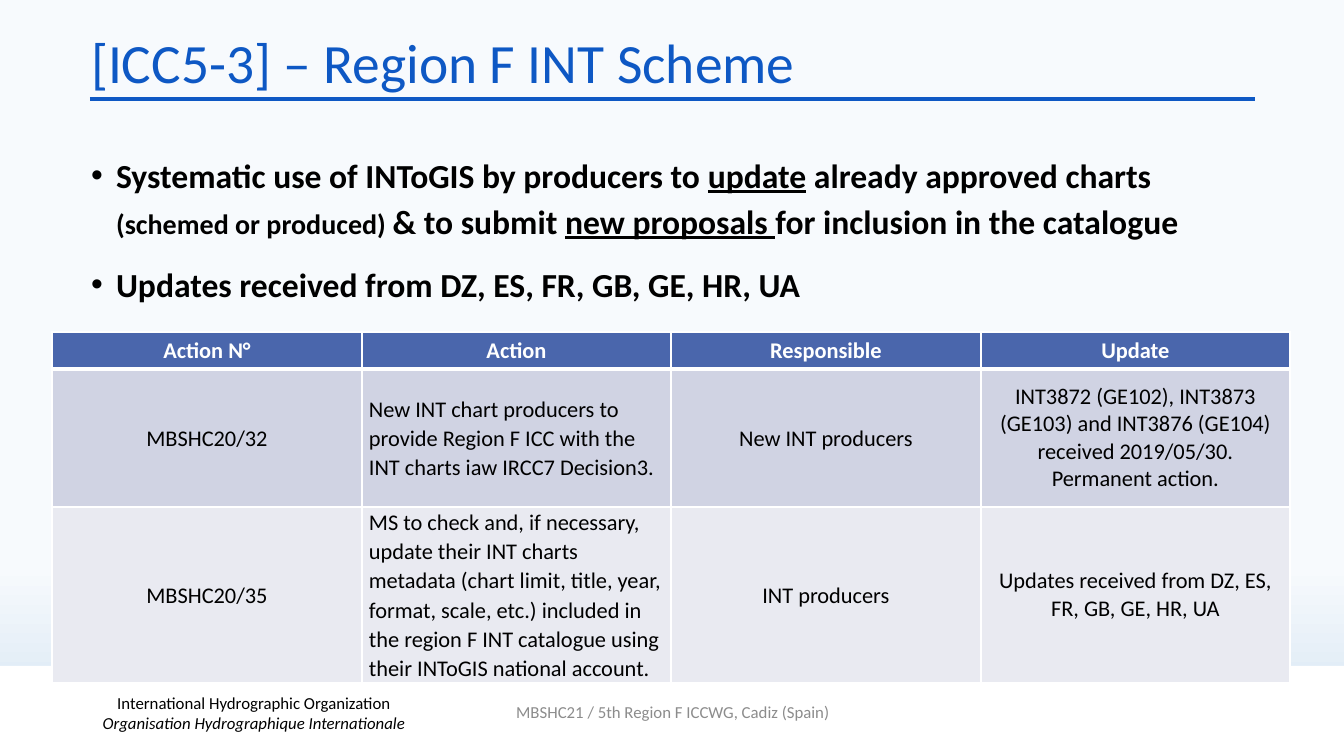
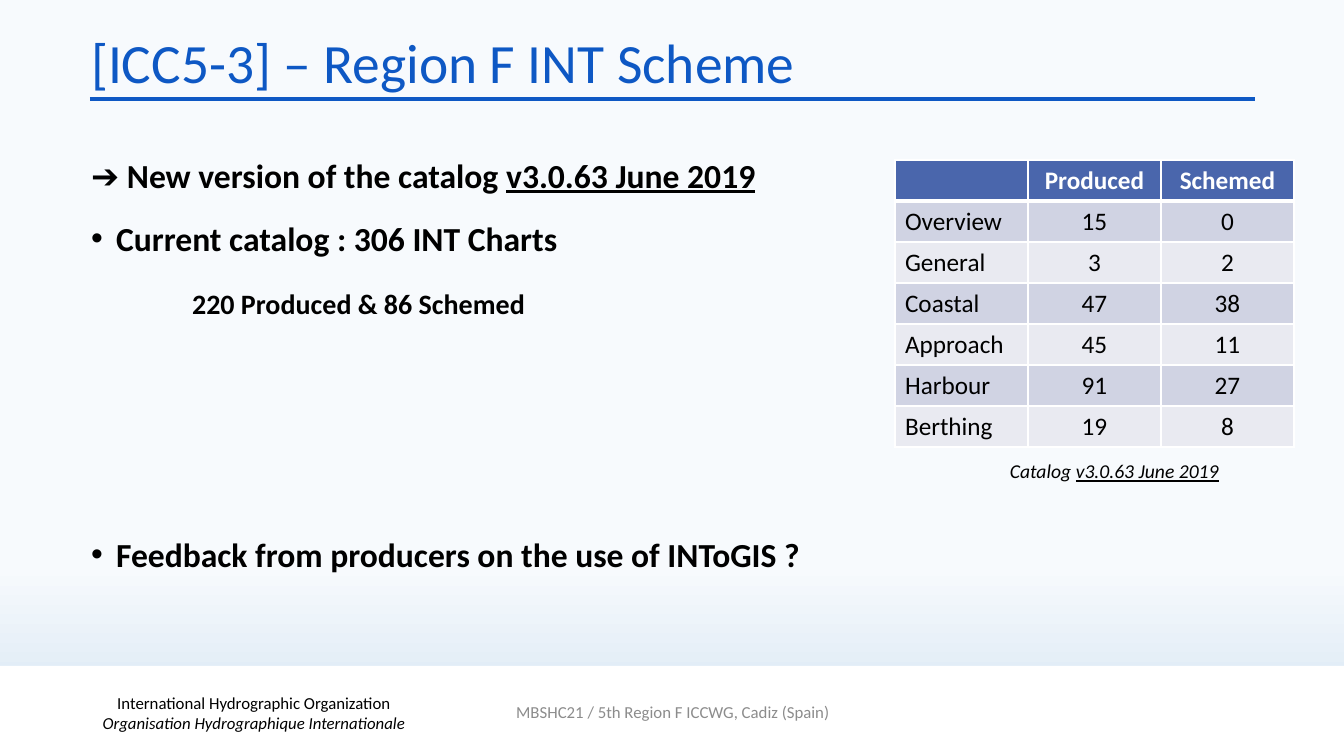
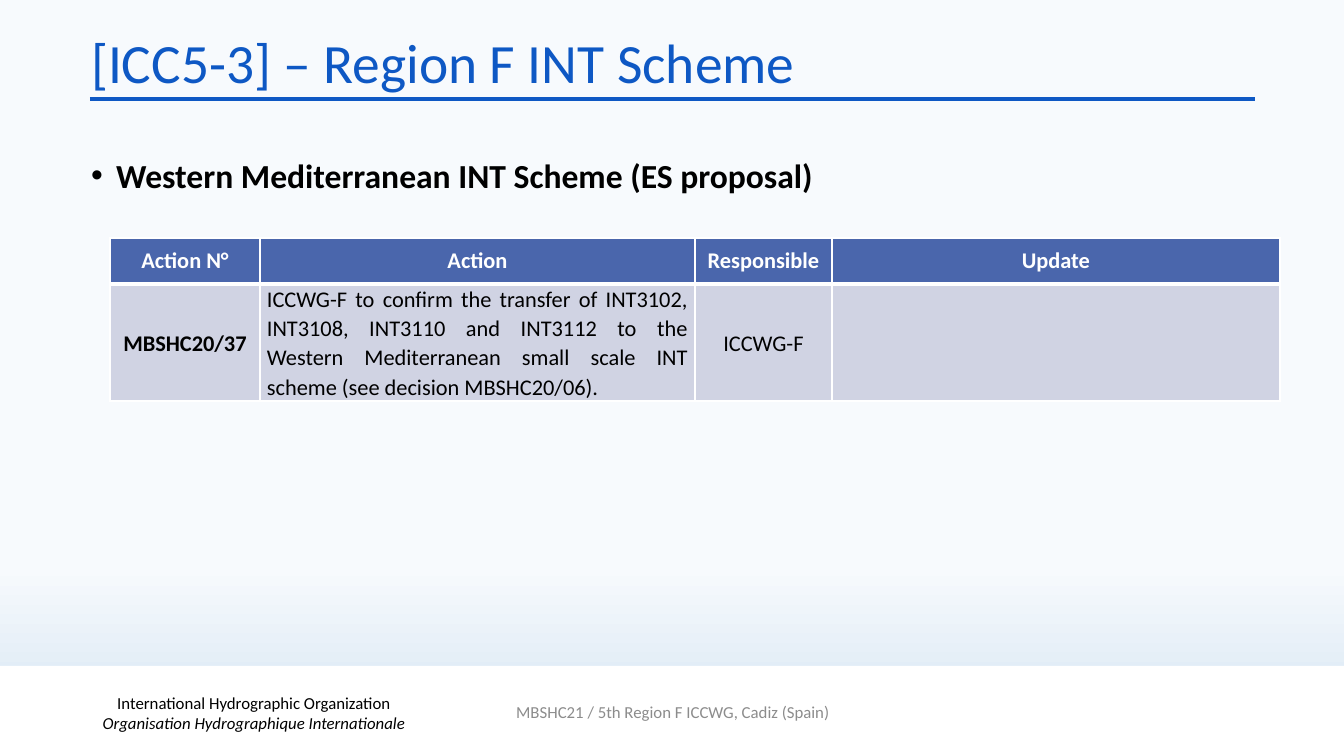
"""Build the three Region F INT Scheme slides."""
from dataclasses import dataclass

from lxml.etree import SubElement
from pptx import Presentation
from pptx.dml.color import RGBColor
from pptx.enum.shapes import MSO_CONNECTOR, MSO_SHAPE
from pptx.enum.text import MSO_ANCHOR, MSO_AUTO_SIZE, PP_ALIGN
from pptx.oxml.ns import qn
from pptx.util import Emu, Pt


@dataclass(frozen=True)
class Theme:
    font: str = "Calibri"
    title: str = "0E58C4"
    text: str = "000000"
    muted: str = "8C8C8C"
    white: str = "FFFFFF"
    sky_top: str = "F7FAFD"
    sky_bottom: str = "D0E2F1"
    header: str = "4A66AC"
    bands: tuple = ("D0D3E3", "E9EAF1")
    title_size: float = 39.6
    body_size: int = 24
    detail_size: int = 20
    numbers_size: int = 18
    actions_size: int = 16
    caption_size: int = 14
    footer_size: int = 12


THEME = Theme()
SCALE = 914400 / 100.8
LEFT, CENTER, JUSTIFY = PP_ALIGN.LEFT, PP_ALIGN.CENTER, PP_ALIGN.JUSTIFY


def px(*lengths):
    return [Emu(round(length * SCALE)) for length in lengths]


def write(frame, text, size, color=THEME.text, bold=False, italic=False, align=LEFT,
          spacing=1.0, before=0, after=0, bullet=None, margin=0):
    paragraph = frame.paragraphs[0]
    if paragraph.runs:
        paragraph = frame.add_paragraph()
    if bullet is not None:
        properties = paragraph._p.get_or_add_pPr()
        left, hanging = px(margin, -25 if bullet else 0)
        properties.set("marL", str(left))
        properties.set("indent", str(hanging))
        if bullet:
            SubElement(properties, qn("a:buChar"), char=bullet)
        else:
            SubElement(properties, qn("a:buNone"))
    paragraph.alignment = align
    paragraph.line_spacing = spacing
    paragraph.space_before, paragraph.space_after = Pt(before), Pt(after)
    for piece in [text] if isinstance(text, str) else text:
        wording, changes = (piece, {}) if isinstance(piece, str) else piece
        run = paragraph.add_run()
        run.text = wording
        font = run.font
        font.name = THEME.font
        font.size = Pt(changes.get("size", size))
        font.bold = changes.get("bold", bold)
        font.italic = changes.get("italic", italic)
        font.underline = changes.get("underline", False)
        font.color.rgb = RGBColor.from_string(color)


UNDERLINE = {"underline": True}
VERSION = ("v3.0.63 June 2019", UNDERLINE)
BULLET = {"bullet": "•", "margin": 25}
PLAIN = {"bullet": ""}
ACTION_HEADER = ["Action N°", "Action", "Responsible", "Update"]

SLIDES = [
    {
        "body": [
            (["Systematic use of INToGIS by producers to ", ("update", UNDERLINE),
              " already approved charts ",
              ("(schemed or produced) ", {"size": THEME.detail_size}),
              "& to submit ", ("new proposals ", UNDERLINE),
              "for inclusion in the catalogue"], BULLET),
            ("Updates received from DZ, ES, FR, GB, GE, HR, UA", BULLET),
        ],
        "corner": (52, 332), "columns": [310, 309, 310, 309], "heights": [37, 138, 176],
        "aligns": [CENTER, LEFT, CENTER, CENTER], "size": THEME.actions_size, "tight": 3,
        "rows": [
            ACTION_HEADER,
            ["MBSHC20/32",
             "New INT chart producers to provide Region F ICC with the INT charts iaw "
             "IRCC7 Decision3.",
             "New INT producers",
             "INT3872 (GE102), INT3873 (GE103) and INT3876 (GE104) received 2019/05/30."
             "\nPermanent action."],
            ["MBSHC20/35",
             "MS to check and, if necessary, update their INT charts metadata (chart "
             "limit, title, year, format, scale, etc.) included in the region F INT "
             "catalogue using their INToGIS national account.",
             "INT producers",
             "Updates received from DZ, ES, FR, GB, GE, HR, UA"],
        ],
    },
    {
        "body": [
            (["➔ New version of the catalog ", VERSION], PLAIN),
            ("Current catalog : 306 INT Charts", BULLET),
            ("220 Produced & 86 Schemed",
             PLAIN | {"margin": 101, "size": THEME.detail_size, "before": 5}),
            ("Feedback from producers on the use of INToGIS ?", BULLET | {"before": 137}),
        ],
        "corner": (895, 160), "columns": [133] * 3, "heights": [41] * 7,
        "aligns": [LEFT, CENTER, CENTER], "size": THEME.numbers_size, "tight": 0,
        "rows": [
            ["", "Produced", "Schemed"],
            ["Overview", "15", "0"],
            ["General", "3", "2"],
            ["Coastal", "47", "38"],
            ["Approach", "45", "11"],
            ["Harbour", "91", "27"],
            ["Berthing", "19", "8"],
        ],
        "caption": ["Catalog ", VERSION],
    },
    {
        "body": [("Western Mediterranean INT Scheme (ES proposal)", BULLET)],
        "corner": (110, 238), "columns": [150, 435, 137, 448], "heights": [46, 117],
        "aligns": [CENTER, JUSTIFY, CENTER, CENTER], "size": THEME.actions_size, "tight": 3,
        "bold_first": True,
        "rows": [
            ACTION_HEADER,
            ["MBSHC20/37",
             "ICCWG-F to confirm the transfer of INT3102, INT3108, INT3110 and INT3112 to "
             "the Western Mediterranean small scale INT scheme (see decision MBSHC20/06).",
             "ICCWG-F", ""],
        ],
    },
]

FOOTERS = [
    (27, 693, [("International Hydrographic Organization", {}),
               ("Organisation Hydrographique Internationale", {"italic": True})]),
    (446, 692, [("MBSHC21 / 5th Region F ICCWG, Cadiz (Spain)", {"color": THEME.muted})]),
]

presentation = Presentation()
presentation.slide_width, presentation.slide_height = px(1344, 756)
sky = presentation.slide_master.background.fill
sky.gradient()
sky.gradient_angle = 270
for stop, position, color in zip(sky.gradient_stops, (0.75, 1),
                                 (THEME.sky_top, THEME.sky_bottom)):
    stop.position = position
    stop.color.rgb = RGBColor.from_string(color)

for content in SLIDES:
    slide = presentation.slides.add_slide(presentation.slide_layouts[1])

    rule = slide.shapes.add_connector(MSO_CONNECTOR.STRAIGHT, *px(90, 99, 1255, 99))
    rule.line.color.rgb = RGBColor.from_string(THEME.title)
    rule.line.width = Pt(2.25)
    SubElement(rule._element.spPr, qn("a:effectLst"))

    band = slide.shapes.add_shape(MSO_SHAPE.RECTANGLE, *px(0, 666, 1344, 90))
    band.shadow.inherit = False
    band.fill.solid()
    band.fill.fore_color.rgb = RGBColor.from_string(THEME.white)
    band.line.fill.background()

    for left, top, lines in FOOTERS:
        frame = slide.shapes.add_textbox(*px(left, top, 454, 40)).text_frame
        frame.word_wrap = True
        frame.vertical_anchor = MSO_ANCHOR.MIDDLE
        for line, style in lines:
            write(frame, line, THEME.footer_size, align=CENTER, **style)

    title, body = slide.shapes.title, slide.placeholders[1]
    for placeholder, box, anchor in ((title, (81, 30, 990, 71), MSO_ANCHOR.MIDDLE),
                                     (body, (81, 144, 1173, 307), MSO_ANCHOR.TOP)):
        placeholder.left, placeholder.top, placeholder.width, placeholder.height = px(*box)
        placeholder.text_frame.auto_size = MSO_AUTO_SIZE.NONE
        placeholder.text_frame.vertical_anchor = anchor
    write(title.text_frame, "[ICC5-3] – Region F INT Scheme", THEME.title_size,
          color=THEME.title, spacing=0.9)
    for text, style in content["body"]:
        write(body.text_frame, text,
              **{"size": THEME.body_size, "bold": True, "spacing": 1.14, "after": 12} | style)

    rows, columns, heights = content["rows"], content["columns"], content["heights"]
    table = slide.shapes.add_table(
        len(rows), len(columns),
        *px(*content["corner"], sum(columns), sum(heights))).table
    for column, width in zip(table.columns, px(*columns)):
        column.width = width
    for row, height in zip(table.rows, px(*heights)):
        row.height = height
    for row_index, row in enumerate(rows):
        is_header = row_index == 0
        for column_index, text in enumerate(row):
            cell = table.cell(row_index, column_index)
            cell.vertical_anchor = MSO_ANCHOR.MIDDLE
            tight = not is_header and column_index < content["tight"]
            if tight:
                cell.margin_left, cell.margin_right = px(7, 7)
                cell.margin_top = cell.margin_bottom = 0
            for side, width in (("L", 1), ("R", 1), ("T", 3 if row_index == 1 else 1),
                                ("B", 3 if is_header else 1)):
                border = SubElement(cell._tc.get_or_add_tcPr(), qn(f"a:ln{side}"),
                                    w=str(Pt(width)))
                SubElement(SubElement(border, qn("a:solidFill")), qn("a:srgbClr"),
                           val=THEME.white)
            cell.fill.solid()
            cell.fill.fore_color.rgb = RGBColor.from_string(
                THEME.header if is_header else THEME.bands[(row_index - 1) % 2])
            for line in text.split("\n") if text else []:
                write(cell.text_frame, line, content["size"],
                      color=THEME.white if is_header else THEME.text,
                      bold=is_header or (column_index == 0 and "bold_first" in content),
                      align=CENTER if is_header else content["aligns"][column_index],
                      spacing=1.07 if tight else 1.0)

    if "caption" in content:
        caption = slide.shapes.add_textbox(*px(1000, 454, 232, 34)).text_frame
        caption.word_wrap = False
        write(caption, content["caption"], THEME.caption_size, italic=True)

presentation.save("out.pptx")
